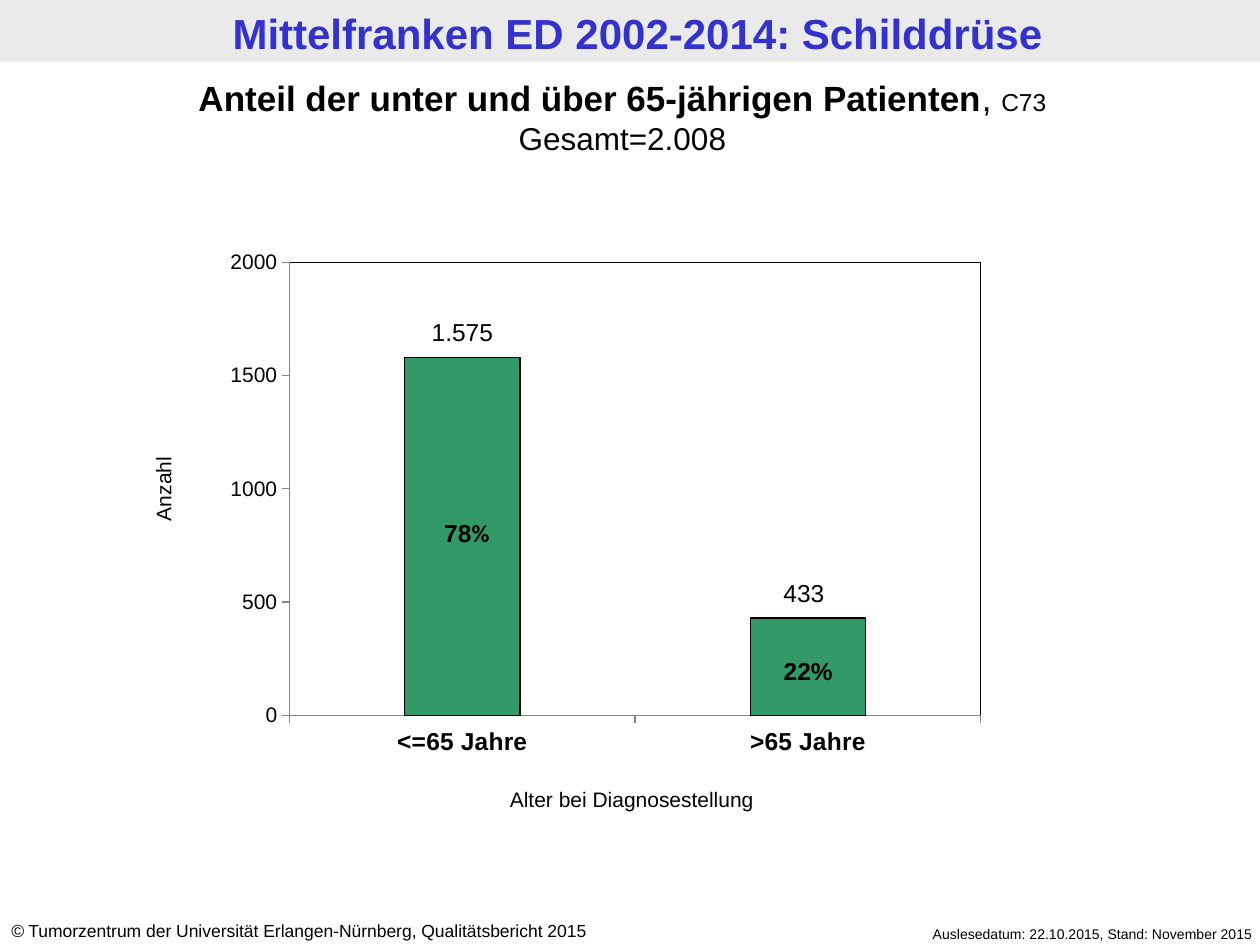
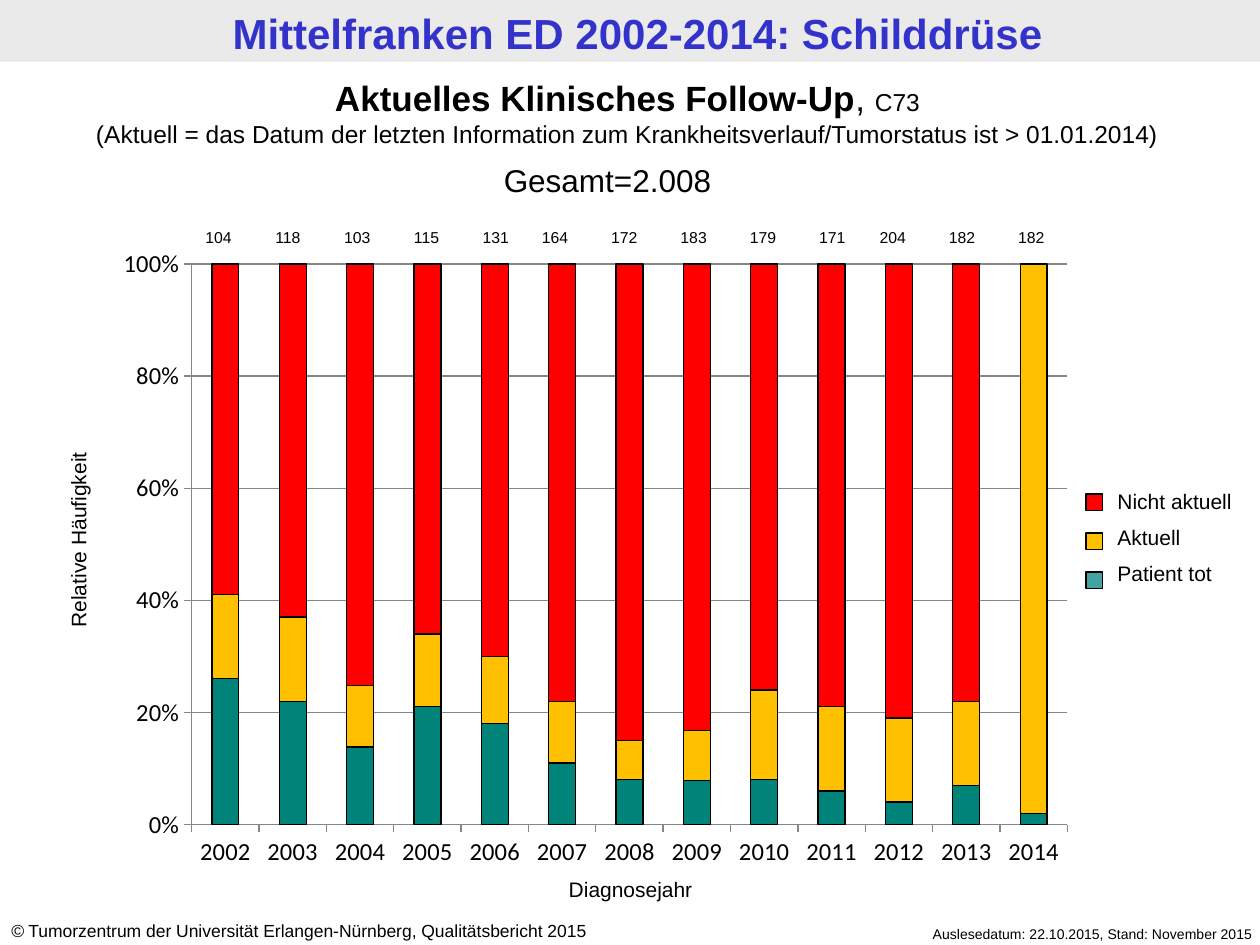
from lxml import etree
from pptx import Presentation
from pptx.chart.data import CategoryChartData
from pptx.dml.color import RGBColor
from pptx.enum import chart as charts, shapes, text
from pptx.oxml import ns
from pptx.util import Inches, Pt

COLORS = {
    "band": "EAEAEA", "header": "3333CC", "black": "000000", "axis": "868686",
    "green": "339966", "dead": "008378", "dead_key": "008380",
    "current": "FFC000", "outdated": "FF0000",
}
LEFT, CENTER, RIGHT = text.PP_ALIGN.LEFT, text.PP_ALIGN.CENTER, text.PP_ALIGN.RIGHT


def run(words, size, bold=False, italic=False, font="Arial", color="black"):
    return words, size, bold, italic, font, color


def color(name):
    return RGBColor.from_string(COLORS[name])


def child(parent, tag, **attributes):
    return etree.SubElement(parent, ns.qn(tag), attributes)


class Deck:
    """Holds the shared style and the slide being built."""

    def __init__(self):
        self.prs = Presentation()
        self.prs.slide_width, self.prs.slide_height = Inches(10), Inches(7.5)
        self.slide = None

    def new_slide(self, place, heading):
        self.slide = self.prs.slides.add_slide(self.prs.slide_layouts[5])
        # Header band
        self.box((0, 0, 10, 0.49), "band")
        self.text((0.06, 0.02, 10, 0.49),
                  [[run("Mittelfranken ED 2002-2014: Schilddrüse", 24, bold=True, color="header")]],
                  margins=(0.09, 0.04))
        # Footers
        self.text((6.65, 7.3, 3.39, 0.24),
                  [[run("Auslesedatum: 22.10.2015, Stand: November 2015", 8)]], RIGHT)
        self.text((-0.01, 7.25, 5.24, 0.27),
                  [[run("©", 10, italic=True),
                    run(" Tumorzentrum der Universität Erlangen-Nürnberg, Qualitätsbericht 2015", 10)]], LEFT)
        # Heading
        title = self.slide.shapes.title
        title.left, title.top, title.width, title.height = map(Inches, place)
        self.fill_text(title.text_frame, heading, CENTER)

    def fill_text(self, frame, paragraphs, align, gap=0, margins=(0.1, 0.05)):
        frame.word_wrap = True
        frame.auto_size = text.MSO_AUTO_SIZE.NONE
        frame.vertical_anchor = text.MSO_ANCHOR.TOP
        frame.margin_left = frame.margin_right = Inches(margins[0])
        frame.margin_top = frame.margin_bottom = Inches(margins[1])
        for index, runs in enumerate(paragraphs):
            paragraph = frame.add_paragraph() if index else frame.paragraphs[0]
            paragraph.alignment = align
            paragraph.space_before = Pt(gap if index else 0)
            for words, size, bold, italic, font, tint in runs:
                piece = paragraph.add_run()
                piece.text = words
                piece.font.size, piece.font.name = Pt(size), font
                piece.font.bold, piece.font.italic = bold, italic
                piece.font.color.rgb = color(tint)

    def text(self, place, paragraphs, align=CENTER, gap=0, margins=(0.1, 0.05), rotation=0):
        label = self.slide.shapes.add_textbox(*map(Inches, place))
        label.rotation = rotation
        self.fill_text(label.text_frame, paragraphs, align, gap, margins)

    def box(self, place, fill, outlined=False, opacity=None):
        shape = self.slide.shapes.add_shape(shapes.MSO_SHAPE.RECTANGLE, *map(Inches, place))
        shape.shadow.inherit = False
        shape.fill.solid()
        shape.fill.fore_color.rgb = color(fill)
        if outlined:
            shape.line.color.rgb, shape.line.width = color("black"), Pt(0.75)
        else:
            shape.line.fill.background()
        if opacity:
            tint = next(shape.fill._xPr.iter(ns.qn("a:srgbClr")))
            child(tint, "a:alpha", val=str(opacity * 1000))

    def columns(self, place, kind, categories, series, gap, inner):
        data = CategoryChartData()
        data.categories = categories
        for name, values, _ in series:
            data.add_series(name, values)
        chart = self.slide.shapes.add_chart(kind, *map(Inches, place), data).chart
        chart.has_legend = chart.has_title = False
        chart.font.name, chart.font.size = "Calibri", Pt(18)
        chart.font.color.rgb = color("black")
        plot = chart.plots[0]
        plot.gap_width, plot.overlap, plot.vary_by_categories = gap, 100, False
        for bars, (_, _, fill) in zip(plot.series, series):
            bars.format.fill.solid()
            bars.format.fill.fore_color.rgb = color(fill)
            bars.format.line.color.rgb, bars.format.line.width = color("black"), Pt(0.75)
        for axis in (chart.category_axis, chart.value_axis):
            axis.has_major_gridlines = False
            axis.major_tick_mark = charts.XL_TICK_MARK.OUTSIDE
            axis.minor_tick_mark = charts.XL_TICK_MARK.NONE
            axis.format.line.color.rgb = color("axis")
            axis.tick_labels.font.size = Pt(14)
        self.place_plot(chart, inner)
        return chart

    def place_plot(self, chart, inner):
        area = chart._chartSpace.chart.plotArea
        for old in area.findall(ns.qn("c:layout")):
            area.remove(old)
        layout = etree.Element(ns.qn("c:layout"))
        manual = child(layout, "c:manualLayout")
        child(manual, "c:layoutTarget", val="inner")
        for side in "xy":
            child(manual, f"c:{side}Mode", val="edge")
        for side, share in zip("xywh", inner):
            child(manual, f"c:{side}", val=str(share))
        area.insert(0, layout)

    def frame_plot(self, chart):
        line = child(child(chart._chartSpace.chart.plotArea, "c:spPr"), "a:ln", w="9525")
        child(child(line, "a:solidFill"), "a:srgbClr", val=COLORS["black"])


def age_slide(deck):
    deck.new_slide((0, 0.56, 9.88, 0.74), [
        [run("Anteil der unter und über 65-jährigen Patienten", 20, bold=True),
         run(", ", 20), run("C73", 14)],
        [run("Gesamt=2.008", 18)]])

    # Patients by age group
    chart = deck.columns((1.51, 1.42, 6.98, 4.66), charts.XL_CHART_TYPE.COLUMN_STACKED,
                         ["<=65 Jahre", ">65 Jahre"], [("Anzahl", (1580, 430), "green")],
                         200, (0.113, 0.142, 0.786, 0.772))
    deck.frame_plot(chart)
    ages, counts = chart.category_axis.tick_labels.font, chart.value_axis.tick_labels.font
    ages.name, ages.bold = "Arial", True
    counts.name, counts.size = "Arial", Pt(12)
    chart.value_axis.minimum_scale, chart.value_axis.maximum_scale = 0, 2000
    chart.value_axis.major_unit = 500

    # Shares and counts at the columns
    deck.text((3.27, 4.06, 0.87, 0.34),
              [[run("78", 14, bold=True), run("%", 14, bold=True, font="Calibri")]])
    deck.text((5.94, 5.16, 0.95, 0.34), [[run("22%", 14, bold=True)]])
    deck.text((3.16, 2.47, 1.02, 0.34), [[run("1.575", 14)]])
    deck.text((5.87, 4.54, 1.02, 0.34), [[run("433", 14)]])

    # Axis titles
    deck.text((3.35, 6.19, 3.33, 0.3), [[run("Alter bei Diagnosestellung", 12)]])
    deck.text((-0.01, 3.73, 2.61, 0.3), [[run("Anzahl", 12)]], rotation=270)


def follow_up_slide(deck):
    deck.new_slide((-0.04, 0.56, 10.04, 0.67), [
        [run("Aktuelles Klinisches Follow-Up", 20, bold=True), run(", ", 20), run("C73", 14)],
        [run("(Aktuell = das Datum der letzten Information zum "
             "Krankheitsverlauf/Tumorstatus ist > 01.01.2014)", 14)]])
    deck.text((3.9, 1.23, 2.2, 0.4), [[run("Gesamt=2.008", 18)]], LEFT)

    # Follow-up status by year of diagnosis
    status = [
        ("Patient tot", (26, 22, 14, 21, 18, 11, 8, 8, 8, 6, 4, 7, 2), "dead"),
        ("Aktuell", (15, 15, 11, 13, 12, 11, 7, 9, 16, 15, 15, 15, 98), "current"),
        ("Nicht aktuell", (59, 63, 76, 66, 70, 78, 85, 84, 76, 79, 81, 78, 0), "outdated"),
    ]
    chart = deck.columns((0.82, 1.87, 7.8, 5.11), charts.XL_CHART_TYPE.COLUMN_STACKED_100,
                         [str(year) for year in range(2002, 2015)], status,
                         150, (0.09, 0.044, 0.891, 0.871))
    shares = chart.value_axis
    shares.major_unit = 0.2
    shares.has_major_gridlines = True
    shares.major_gridlines.format.line.color.rgb = color("axis")
    shares.tick_labels.number_format = "0%"
    shares.tick_labels.number_format_is_linked = False

    # Axis titles
    deck.text((-0.58, 4.13, 2.41, 0.31), [[run("Relative Häufigkeit", 12)]], rotation=270)
    deck.text((3.88, 6.91, 2.25, 0.31), [[run("Diagnosejahr", 12)]])

    # Legend
    deck.text((8.77, 3.83, 1.42, 0.91),
              [[run(name, 12)] for name, _, _ in reversed(status)], LEFT, gap=6)
    for row, (fill, opacity) in enumerate([("outdated", None), ("current", None), ("dead_key", 74)]):
        deck.box((8.62, 3.92 + row * 0.31, 0.13, 0.13), fill, outlined=True, opacity=opacity)

    # Yearly totals above the columns, in three evenly spaced groups
    totals = [(1.46, (104, 118, 103, 115, 131)),
              (4.13, (164, 172, 183, 179, 171)),
              (6.81, (204, 182, 182))]
    for start, group in totals:
        for column, total in enumerate(group):
            deck.text((start + column * 0.55, 1.76, 0.55, 0.25), [[run(str(total), 9)]])


def main():
    deck = Deck()
    age_slide(deck)
    follow_up_slide(deck)
    deck.prs.save("out.pptx")


if __name__ == "__main__":
    main()
